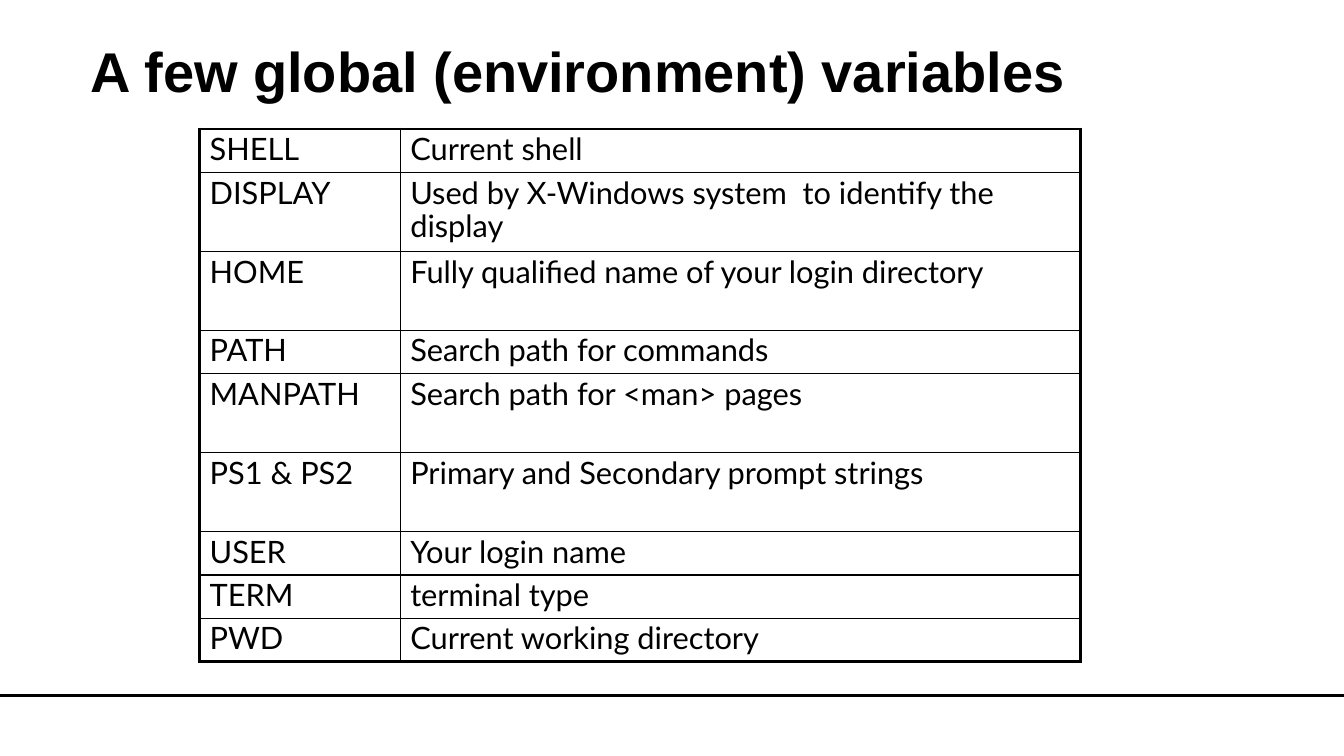
import pptx
import pptx.util
import pptx.dml.color
import pptx.enum.shapes
import pptx.enum.text
import pptx.oxml
import pptx.oxml.ns
from lxml import etree

Pt = pptx.util.Pt
hues = {"ink": "000000", "page": "FFFFFF"}
ink = pptx.dml.color.RGBColor.from_string(hues["ink"])


def edge(cell, side, width):
    props = cell._tc.get_or_add_tcPr()
    line = etree.SubElement(props, pptx.oxml.ns.qn("a:ln" + side), w=str(Pt(width)))
    fill = etree.SubElement(line, pptx.oxml.ns.qn("a:solidFill"))
    etree.SubElement(fill, pptx.oxml.ns.qn("a:srgbClr"), val=hues["ink"])


def style(para, face, size, bold):
    para.alignment = pptx.enum.text.PP_ALIGN.LEFT
    para.line_spacing = 0.9
    para.font.name = face
    para.font.size = Pt(size)
    para.font.bold = bold
    para.font.color.rgb = ink


deck = pptx.Presentation()
deck.slide_width = Pt(960)
deck.slide_height = Pt(540)
slide = deck.slides.add_slide(deck.slide_layouts[5])

rule = slide.shapes.add_connector(
    pptx.enum.shapes.MSO_CONNECTOR.STRAIGHT, 0, Pt(496.6), Pt(960), Pt(496.6))
rule.line.width = Pt(2)
rule.line.color.rgb = ink
etree.SubElement(rule._element.spPr, pptx.oxml.ns.qn("a:effectLst"))

title = slide.shapes.title
title.left, title.top = Pt(57.6), Pt(28)
title.width, title.height = Pt(828), Pt(104.4)
title.text_frame.text = "A few global (environment) variables"
title.text_frame.vertical_anchor = pptx.enum.text.MSO_ANCHOR.TOP
style(title.text_frame.paragraphs[0], "Arial", 40, True)

short, tall = 31, 56.4
rows = [
    ("SHELL", "Current shell", short),
    ("DISPLAY", "Used by X-Windows system  to identify the display", tall),
    ("HOME", "Fully qualified name of your login directory", tall),
    ("PATH", "Search path for commands", short),
    ("MANPATH", "Search path for <man> pages", tall),
    ("PS1 & PS2", "Primary and Secondary prompt strings", tall),
    ("USER", "Your login name", short),
    ("TERM", "terminal type", short),
    ("PWD", "Current working directory", short),
]
thin, thick = 1, 2.25
last = len(rows) - 1
high = sum(row[2] for row in rows)
frame = slide.shapes.add_table(
    len(rows), 2, Pt(142.6), Pt(92.2), Pt(629.3), Pt(high))
table = frame.table
table.first_row = False
table.horz_banding = False
table.columns[0].width = Pt(143.3)
table.columns[1].width = Pt(486)

for r, (name, use, tallness) in enumerate(rows):
    table.rows[r].height = Pt(tallness)
    for c, text in enumerate((name, use)):
        cell = table.cell(r, c)
        cell.text = text
        style(cell.text_frame.paragraphs[0], "Lato", 22, False)
        edge(cell, "L", thick if c == 0 else thin)
        edge(cell, "R", thick if c == 1 else thin)
        edge(cell, "T", thick if r == 0 else thin)
        edge(cell, "B", thick if r == last else thin)
        cell.fill.background()

deck.save("out.pptx")
